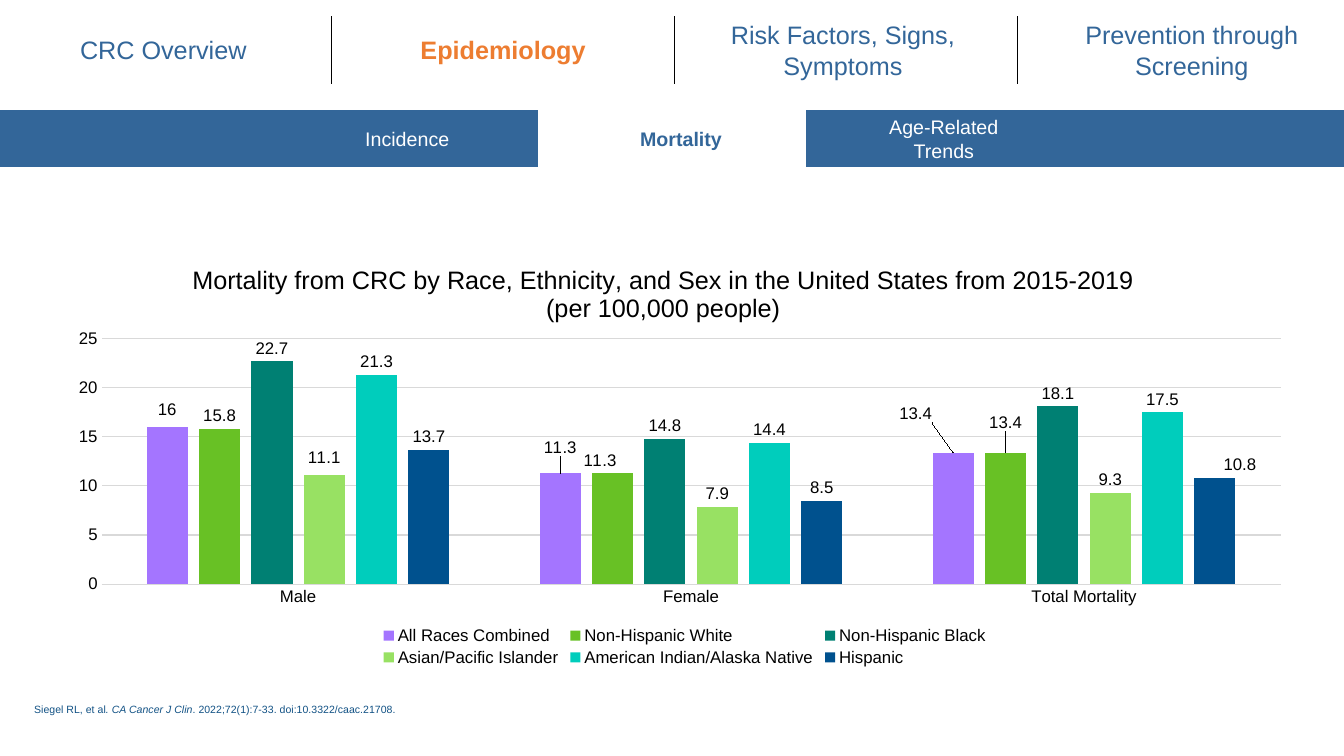
from dataclasses import dataclass

from lxml import etree
from pptx import Presentation
from pptx.chart import data as chart_data
from pptx.dml import color
from pptx.enum import chart as chart_kinds, shapes, text
from pptx.oxml import ns
from pptx.util import Inches, Pt


@dataclass(frozen=True)
class Theme:
    font: str = "Arial"
    blue: str = "336699"
    orange: str = "ED7D31"
    white: str = "FFFFFF"
    black: str = "000000"
    grid: str = "D9D9D9"
    citation: str = "125285"
    heading_size: float = 18
    tab_size: float = 14
    chart_size: float = 12
    citation_size: float = 7.5


@dataclass(frozen=True)
class Box:
    left: float
    top: float
    width: float
    height: float

    def inches(self):
        return [Inches(v) for v in (self.left, self.top, self.width, self.height)]

    def cell(self, column, columns, width, height, shift=0):
        """A centred part of one column in a row of equal columns."""
        middle = self.left + (column + 0.5) * self.width / columns + shift
        return Box(middle - width / 2, self.top + (self.height - height) / 2, width, height)


THEME = Theme()
NO_TABLE_STYLE = "{2D5ABB26-0587-4C30-8999-92F81FD0307C}"
TOPICS = [  # name, width, shift from the column's middle
    ("CRC Overview", 2.09, 0.03),
    ("Epidemiology", 2.34, 0),
    ("Risk Factors, Signs, Symptoms", 2.47, -0.03),
    ("Prevention through Screening", 2.5, 0.03),
]
TABS = [  # column, name, height, shift
    (1, "Incidence", 0.24, 0.04),
    (2, "Mortality", 0.24, 0.09),
    (3, "Age-Related Trends", 0.47, 0.03),
]
GROUPS = ["Male", "Female", "Total Mortality"]
RATES = [  # name, colour, values, {group: label shift as shares of the chart}
    ("All Races Combined", "A475FF", (16, 11.3, 13.4),
     {0: (0, -0.01), 1: (0, -0.03), 2: (-0.03, -0.06)}),
    ("Non-Hispanic White", "68C125", (15.8, 11.3, 13.4), {1: (-0.01, 0), 2: (0, -0.04)}),
    ("Non-Hispanic Black", "008073", (22.7, 14.8, 18.1), {}),
    ("Asian/Pacific Islander", "98E163", (11.1, 7.9, 9.3), {0: (0, -0.01)}),
    ("American Indian/Alaska Native", "00CDBC", (21.3, 14.4, 17.5), {}),
    ("Hispanic", "00518E", (13.7, 8.5, 10.8), {2: (0.02, 0)}),
]


def rgb(value):
    return color.RGBColor.from_string(value)


def style_font(font, size, ink, bold=False, italic=False):
    font.name, font.size = THEME.font, Pt(size)
    font.bold, font.italic = bold, italic
    font.color.rgb = rgb(ink)


def add_label(page, box, words, size, ink, fill, bold=False, inset=None):
    label = page.shapes.add_shape(shapes.MSO_SHAPE.RECTANGLE, *box.inches())
    label.shadow.inherit = False
    label.fill.solid()
    label.fill.fore_color.rgb = rgb(fill)
    label.line.fill.background()
    frame = label.text_frame
    frame.word_wrap = True
    frame.vertical_anchor = text.MSO_ANCHOR.MIDDLE
    if inset is not None:
        frame.margin_left = frame.margin_right = frame.margin_top = frame.margin_bottom = inset
    para = frame.paragraphs[0]
    para.alignment = text.PP_ALIGN.CENTER
    span = para.add_run()
    span.text = words
    style_font(span.font, size, ink, bold)


def add_row(page, box, columns):
    """One-row table without style; returns its cells."""
    table = page.shapes.add_table(1, columns, *box.inches()).table
    table.first_row = table.horz_banding = False
    table._tbl.tblPr.find(ns.qn("a:tableStyleId")).text = NO_TABLE_STYLE
    for cell in table.iter_cells():
        cell.fill.background()
    return list(table.iter_cells())


def add_right_border(cell, ink):
    line = etree.Element(ns.qn("a:lnR"), w=str(Pt(1)))
    fill = etree.SubElement(line, ns.qn("a:solidFill"))
    etree.SubElement(fill, ns.qn("a:srgbClr"), val=ink)
    cell._tc.get_or_add_tcPr().insert(0, line)


def add_topics(page, box, active):
    for cell in add_row(page, box, len(TOPICS))[:-1]:
        add_right_border(cell, THEME.black)
    for column, (name, width, shift) in enumerate(TOPICS):
        chosen = name == active
        add_label(page, box.cell(column, len(TOPICS), width, 0.7, shift), name,
                  THEME.heading_size, THEME.orange if chosen else THEME.blue,
                  THEME.white, chosen)


def add_tabs(page, box, active):
    columns = 5
    cells = add_row(page, box, columns)
    open_column = next(column for column, name, *_ in TABS if name == active)
    for column, cell in enumerate(cells):
        if column != open_column:
            cell.fill.solid()
            cell.fill.fore_color.rgb = rgb(THEME.blue)
    for column, name, height, shift in TABS:
        chosen = name == active
        ink, fill = (THEME.blue, THEME.white) if chosen else (THEME.white, THEME.blue)
        add_label(page, box.cell(column, columns, 1.59, height, shift), name,
                  THEME.tab_size, ink, fill, chosen, inset=0)


def make_layout(parts):
    layout = etree.Element(ns.qn("c:layout"))
    manual = etree.SubElement(layout, ns.qn("c:manualLayout"))
    for tag, value in parts.items():
        etree.SubElement(manual, ns.qn("c:" + tag), val=str(value))
    return layout


def place_part(element, after, **parts):
    """Give a chart part a manual layout, behind its child named in after."""
    for old in element.findall(ns.qn("c:layout")):
        element.remove(old)
    layout = make_layout(parts)
    if after is None:
        element.insert(0, layout)
    else:
        element.find(ns.qn(after)).addnext(layout)


def add_mortality_chart(page, box):
    data = chart_data.CategoryChartData()
    data.categories = GROUPS
    for name, _, values, _ in RATES:
        data.add_series(name, values)
    chart = page.shapes.add_chart(
        chart_kinds.XL_CHART_TYPE.COLUMN_CLUSTERED, *box.inches(), data).chart
    style_font(chart.font, THEME.chart_size, THEME.black)

    # Title
    frame = chart.chart_title.text_frame
    lines = ["Mortality from CRC by Race, Ethnicity, and Sex in the United States from 2015-2019",
             "(per 100,000 people)"]
    for number, words in enumerate(lines):
        para = frame.add_paragraph() if number else frame.paragraphs[0]
        span = para.add_run()
        span.text = words
        style_font(span.font, THEME.heading_size, THEME.black)
    chart.chart_title.include_in_layout = False
    place_part(chart.chart_title._element, "c:tx", xMode="edge", yMode="edge", x=0.11, y=0.05)

    # Axes
    for axis in (chart.category_axis, chart.value_axis):
        axis.major_tick_mark = axis.minor_tick_mark = chart_kinds.XL_TICK_MARK.NONE
        style_font(axis.tick_labels.font, THEME.chart_size, THEME.black)
    values_axis = chart.value_axis
    values_axis.minimum_scale, values_axis.maximum_scale, values_axis.major_unit = 0, 25, 5
    values_axis.format.line.fill.background()
    for line in (chart.category_axis.format.line, values_axis.major_gridlines.format.line):
        line.color.rgb = rgb(THEME.grid)
        line.width = Pt(0.75)

    # Columns and their labels
    plot = chart.plots[0]
    plot.gap_width, plot.overlap, plot.vary_by_categories = 219, -27, False
    outside = chart_kinds.XL_LABEL_POSITION.OUTSIDE_END
    for series, (_, fill, _, shifts) in zip(plot.series, RATES):
        series.format.fill.solid()
        series.format.fill.fore_color.rgb = rgb(fill)
        labels = series.data_labels
        labels.show_value, labels.position = True, outside
        style_font(labels.font, THEME.chart_size, THEME.black)
        for group, (across, down) in shifts.items():
            label = series.points[group].data_label
            label.position = outside
            style_font(label.font, THEME.chart_size, THEME.black)
            place_part(label._get_or_add_dLbl(), "c:idx", x=across, y=down)

    # Legend and plot area
    chart.has_legend = True
    legend = chart.legend
    legend.position = chart_kinds.XL_LEGEND_POSITION.BOTTOM
    legend.include_in_layout = False
    style_font(legend.font, THEME.chart_size, THEME.black)
    place_part(legend._element, "c:legendPos", xMode="edge", yMode="edge",
               x=0.26, y=0.89, w=0.49, h=0.11)
    place_part(plot._element.getparent(), None, layoutTarget="inner", xMode="edge",
               yMode="edge", x=0.04, y=0.23, w=0.94, h=0.57)


def add_citation(page, box):
    frame = page.shapes.add_textbox(*box.inches()).text_frame
    frame.word_wrap = True
    para = frame.paragraphs[0]
    for words, italic in [("Siegel RL, et al", False), (". CA Cancer J Clin", True),
                          (". 2022;72(1):7-33. doi:10.3322/caac.21708.", False)]:
        span = para.add_run()
        span.text = words
        style_font(span.font, THEME.citation_size, THEME.citation, italic=italic)


def main():
    deck = Presentation()
    deck.slide_width, deck.slide_height = Inches(13.33), Inches(7.5)
    page = deck.slides.add_slide(deck.slide_layouts[6])
    add_citation(page, Box(0.24, 6.92, 7.89, 0.42))
    add_topics(page, Box(-0.11, 0.16, 13.6, 0.67), "Epidemiology")
    add_tabs(page, Box(0, 1.09, 13.33, 0.57), "Mortality")
    add_mortality_chart(page, Box(0.51, 2.38, 12.44, 4.27))
    deck.save("out.pptx")


if __name__ == "__main__":
    main()
